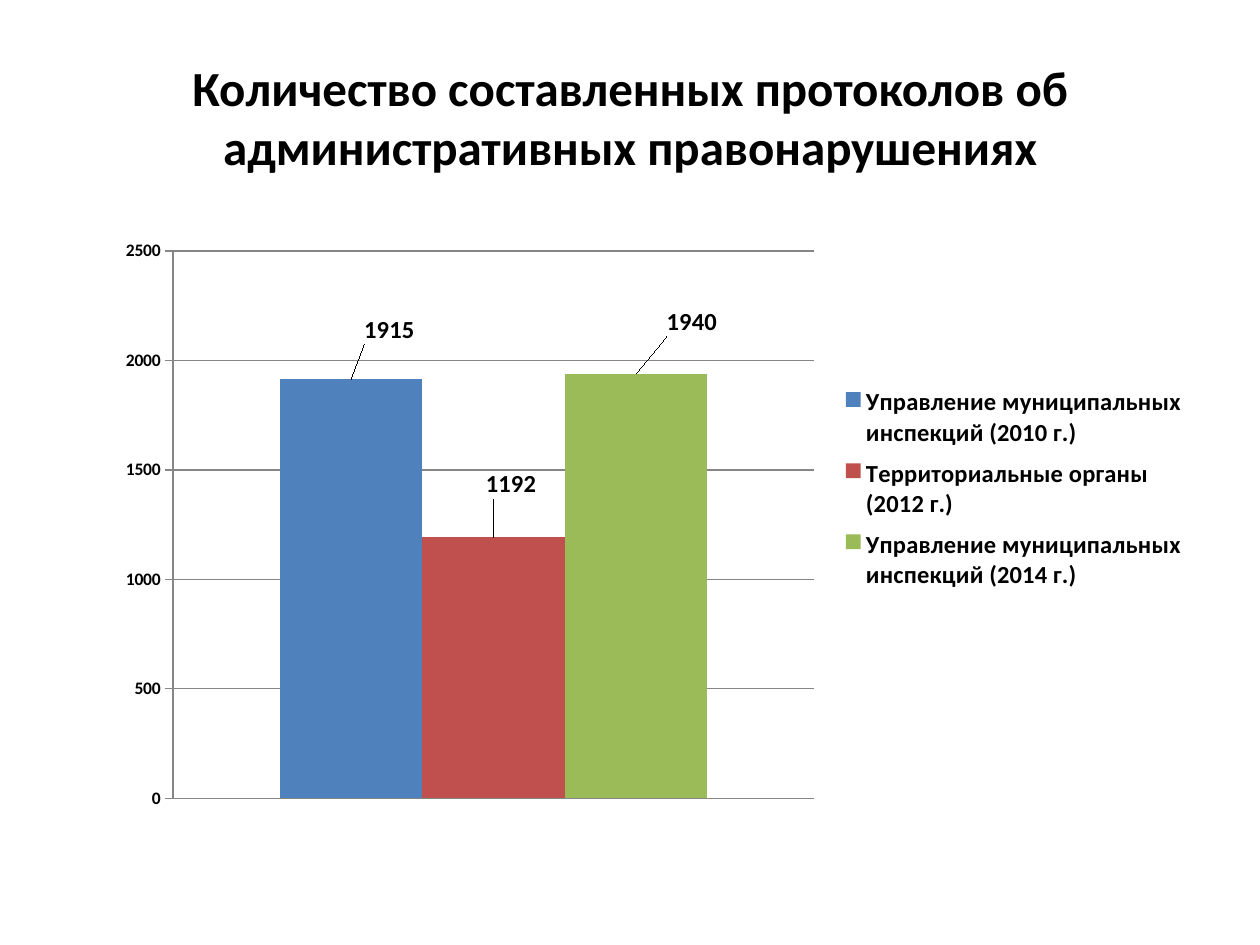
import pptx
import pptx.chart.data
import pptx.dml.color
import pptx.enum.chart
import pptx.enum.text
import pptx.oxml
import pptx.oxml.ns
import pptx.util

Pt = pptx.util.Pt
RGBColor = pptx.dml.color.RGBColor
qn = pptx.oxml.ns.qn

BLACK = RGBColor(0x00, 0x00, 0x00)
GRAY = RGBColor(0x86, 0x86, 0x86)
BLUE = RGBColor(0x4F, 0x81, 0xBD)
RED = RGBColor(0xC0, 0x50, 0x4D)
GREEN = RGBColor(0x9B, 0xBB, 0x59)
FONT = "Calibri"

TITLE = "Количество составленных протоколов об административных правонарушениях"
SERIES = [
    ("Управление муниципальных инспекций (2010 г.)", 1915, BLUE, (0.035, -0.05)),
    ("Территориальные органы (2012 г.)", 1192, RED, (0.016, -0.056)),
    ("Управление муниципальных инспекций (2014 г.)", 1940, GREEN, (0.051, -0.054)),
]


def format_font(font, size, color=BLACK, bold=True):
    """Apply the slide's typeface with the given format."""
    font.name = FONT
    font.size = Pt(size)
    font.bold = bold
    font.color.rgb = color


def write_text(shape, text, size, color=BLACK, bold=True,
               align=pptx.enum.text.PP_ALIGN.CENTER):
    """Write one formatted paragraph into a shape."""
    frame = shape.text_frame
    frame.word_wrap = True
    frame.vertical_anchor = pptx.enum.text.MSO_ANCHOR.MIDDLE
    paragraph = frame.paragraphs[0]
    paragraph.alignment = align
    run = paragraph.add_run()
    run.text = text
    format_font(run.font, size, color, bold)


def set_layout(parent, index, **settings):
    """Give a chart part a manual layout, as fractions of the chart."""
    for layout in parent.findall(qn("c:layout")):
        parent.remove(layout)
    values = "".join(f'<c:{name} val="{value}"/>' for name, value in settings.items())
    parent.insert(index, pptx.oxml.parse_xml(
        f'<c:layout {pptx.oxml.ns.nsdecls("c")}>'
        f"<c:manualLayout>{values}</c:manualLayout></c:layout>"))


def place_title(slide, left, top, width, height):
    """Place and fill the title placeholder."""
    title = slide.shapes.title
    title.left, title.top, title.width, title.height = map(Pt, (left, top, width, height))
    write_text(title, TITLE, 28)


def format_axes(chart):
    """Hide the category axis and style the value axis."""
    chart.category_axis.visible = False
    axis = chart.value_axis
    axis.minimum_scale, axis.maximum_scale, axis.major_unit = 0, 2500, 500
    axis.major_tick_mark = pptx.enum.chart.XL_TICK_MARK.OUTSIDE
    axis.has_major_gridlines = True
    for line in (axis.format.line, axis.major_gridlines.format.line):
        line.color.rgb = GRAY
        line.width = Pt(0.75)
    format_font(axis.tick_labels.font, 10)


def format_series(series, color, offset):
    """Colour one series and shift its value label."""
    series.format.fill.solid()
    series.format.fill.fore_color.rgb = color
    series.invert_if_negative = False
    label = series.points[0].data_label
    format_font(label.font, 14)
    label.position = pptx.enum.chart.XL_LABEL_POSITION.OUTSIDE_END
    set_layout(series._element.find(".//" + qn("c:dLbl")), 1, x=offset[0], y=offset[1])


def place_chart(slide, left, top, width, height):
    """Place the column chart with its legend."""
    data = pptx.chart.data.CategoryChartData()
    data.categories = ["1"]
    for name, value, _, _ in SERIES:
        data.add_series(name, [value])
    chart = slide.shapes.add_chart(
        pptx.enum.chart.XL_CHART_TYPE.COLUMN_CLUSTERED,
        *map(Pt, (left, top, width, height)), data).chart
    chart.has_title = False
    format_font(chart.font, 10)
    format_axes(chart)
    plot = chart.plots[0]
    plot.gap_width, plot.overlap, plot.vary_by_categories = 150, 0, False
    for series, (_, _, color, offset) in zip(plot.series, SERIES):
        format_series(series, color, offset)
    chart.has_legend = True
    chart.legend.position = pptx.enum.chart.XL_LEGEND_POSITION.RIGHT
    chart.legend.include_in_layout = False
    format_font(chart.legend.font, 14)
    set_layout(chart.legend._element, 1, xMode="edge", yMode="edge",
               x=0.67, y=0.25, w=0.32, h=0.38)
    set_layout(chart._chartSpace.find(".//" + qn("c:plotArea")), 0,
               layoutTarget="inner", xMode="edge", yMode="edge",
               x=0.062, y=0.037, w=0.586, h=0.928)


def main():
    """Build and save the presentation."""
    presentation = pptx.Presentation()
    presentation.slide_width, presentation.slide_height = Pt(720), Pt(540)
    slide = presentation.slides.add_slide(presentation.slide_layouts[5])
    place_title(slide, 36, 21.6, 648, 90)
    place_chart(slide, 60, 131, 625.6, 337)
    presentation.save("out.pptx")


if __name__ == "__main__":
    main()
